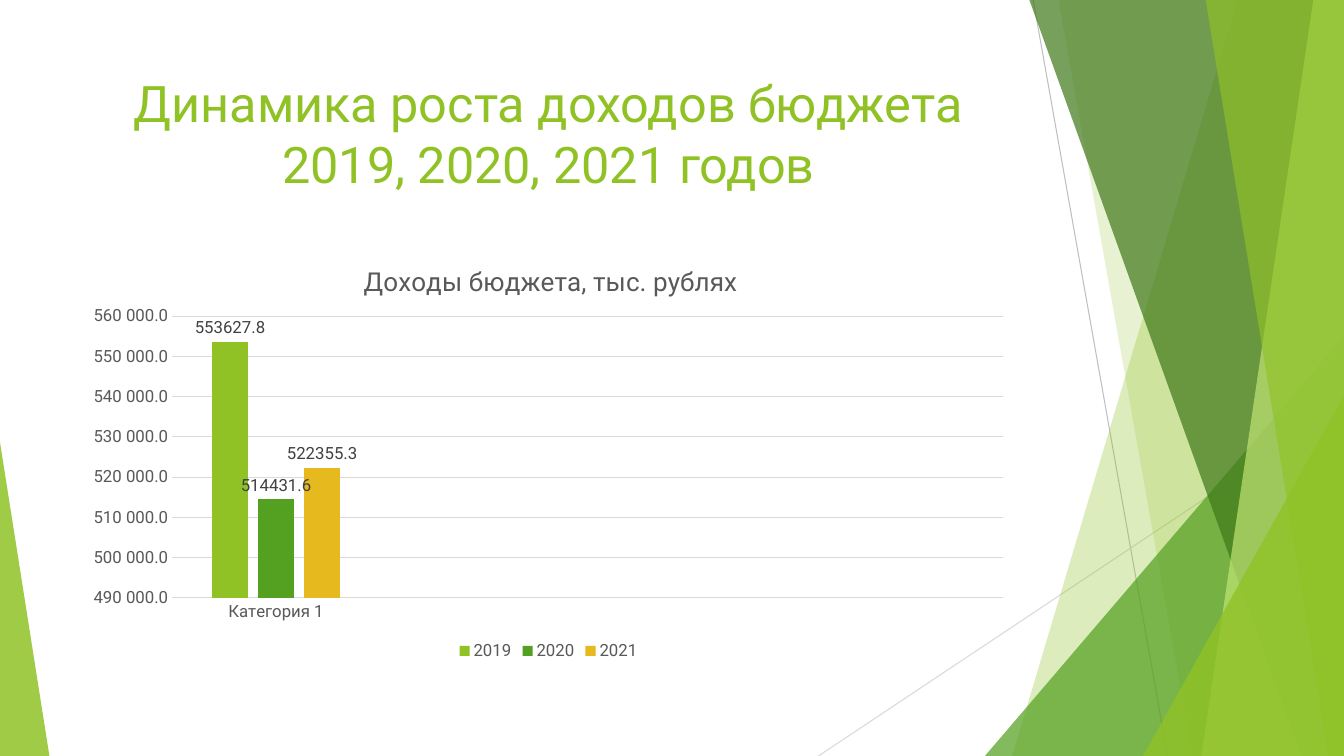
from lxml.etree import SubElement
from pptx import Presentation
from pptx.chart.data import CategoryChartData
from pptx.dml.color import RGBColor
from pptx.enum.chart import XL_CHART_TYPE, XL_LABEL_POSITION, XL_LEGEND_POSITION, XL_TICK_MARK
from pptx.enum.shapes import MSO_CONNECTOR, MSO_SHAPE
from pptx.enum.text import MSO_ANCHOR, PP_ALIGN
from pptx.oxml import parse_xml
from pptx.oxml.ns import nsdecls, qn
from pptx.util import Pt

FONT = "Roboto"
LIME = RGBColor(0x90, 0xC2, 0x26)
GREEN = RGBColor(0x54, 0xA0, 0x21)
FOREST = RGBColor(0x3F, 0x78, 0x19)
PALE_LIME = RGBColor(0xC0, 0xE4, 0x74)
GOLD = RGBColor(0xE6, 0xB9, 0x1E)
GRAY = RGBColor(0xBF, 0xBF, 0xBF)
LIGHT_GRAY = RGBColor(0xD9, 0xD9, 0xD9)
TEXT_GRAY = RGBColor(0x59, 0x59, 0x59)
LABEL_GRAY = RGBColor(0x40, 0x40, 0x40)

WIDTH, HEIGHT = 960, 540
TOP = -0.6
INCOME = [("2019", 553627.8, LIME), ("2020", 514431.6, GREEN), ("2021", 522355.3, GOLD)]
RIBBONS = [
    (884.2, 723, LIME, 30),
    (756, 851.8, LIME, 20),
    (735.1, 929.5, FOREST, 70),
    (938.2, 858.2, PALE_LIME, 70),
    (861.1, 949, LIME, 65),
]


def style_font(font, size, color):
    font.name = FONT
    font.size = Pt(size)
    font.bold = False
    font.color.rgb = color


def paint(shape, color, opacity):
    shape.shadow.inherit = False
    shape.line.fill.background()
    shape.fill.solid()
    shape.fill.fore_color.rgb = color
    color_node = shape._element.spPr.find(qn("a:solidFill"))[0]
    SubElement(color_node, qn("a:alpha")).set("val", str(opacity * 1000))


def add_thin_line(page, start, end, color):
    line = page.shapes.add_connector(
        MSO_CONNECTOR.STRAIGHT, *(Pt(value) for value in start + end))
    line.line.color.rgb = color
    line.line.width = Pt(0.75)
    SubElement(line._element.spPr, qn("a:effectLst"))


def add_ribbon(page, top_left, bottom_left, color, opacity):
    builder = page.shapes.build_freeform(Pt(top_left), Pt(TOP))
    corners = [(WIDTH, TOP), (WIDTH, HEIGHT), (bottom_left, HEIGHT)]
    builder.add_line_segments([(Pt(x), Pt(y)) for x, y in corners], close=True)
    paint(builder.convert_to_shape(), color, opacity)


def add_triangle(page, left, top, width, apex, color, opacity):
    triangle = page.shapes.add_shape(
        MSO_SHAPE.ISOSCELES_TRIANGLE, Pt(left), Pt(top), Pt(width), Pt(HEIGHT - top))
    triangle.adjustments[0] = apex
    paint(triangle, color, opacity)


def add_decoration(page):
    add_thin_line(page, (738, 0), (834, HEIGHT), GRAY)
    add_thin_line(page, (WIDTH, 290), (584.6, HEIGHT), LIGHT_GRAY)
    for ribbon in RIBBONS[:2]:
        add_ribbon(page, *ribbon)
    add_triangle(page, 703.5, 240, 256.5, 1, GREEN, 72)
    for ribbon in RIBBONS[2:]:
        add_ribbon(page, *ribbon)
    add_triangle(page, 816.5, 283, 143.5, 1, LIME, 80)
    add_triangle(page, 0, 316, 35.3, 0, LIME, 85)


def fill_title(page, text):
    title = page.shapes.title
    title.left, title.top, title.width, title.height = Pt(53.3), Pt(48), Pt(677), Pt(104)
    frame = title.text_frame
    frame.word_wrap = True
    frame.vertical_anchor = MSO_ANCHOR.TOP
    para = frame.paragraphs[0]
    para.alignment = PP_ALIGN.CENTER
    span = para.add_run()
    span.text = text
    style_font(span.font, 36, LIME)


def make_layout(target, **places):
    items = "".join(f'<c:{name} val="{value}"/>' for name, value in places.items())
    return parse_xml(
        f'<c:layout {nsdecls("c")}><c:manualLayout>{target}'
        f'<c:xMode val="edge"/><c:yMode val="edge"/>{items}</c:manualLayout></c:layout>')


def place_layout(parent, layout, index):
    for old in parent.findall(qn("c:layout")):
        parent.remove(old)
    parent.insert(index, layout)


def style_chart_title(chart, text):
    chart.has_title = True
    span = chart.chart_title.text_frame.paragraphs[0].add_run()
    span.text = text
    style_font(span.font, 18.6, TEXT_GRAY)
    place_layout(chart.chart_title._element, make_layout("", x=0.3, y=0.05), 1)


def style_axes(chart):
    for axis in (chart.category_axis, chart.value_axis):
        axis.major_tick_mark = XL_TICK_MARK.NONE
        axis.minor_tick_mark = XL_TICK_MARK.NONE
        style_font(axis.tick_labels.font, 12, TEXT_GRAY)
    base = chart.category_axis.format.line
    values = chart.value_axis
    values.format.line.fill.background()
    values.has_major_gridlines = True
    for line in (base, values.major_gridlines.format.line):
        line.color.rgb = LIGHT_GRAY
        line.width = Pt(0.75)
    values.minimum_scale, values.maximum_scale, values.major_unit = 490000, 560000, 10000
    values.tick_labels.number_format = "#\\ ##0.0"
    values.tick_labels.number_format_is_linked = False


def style_series(series, color):
    series.format.fill.solid()
    series.format.fill.fore_color.rgb = color
    series.invert_if_negative = False
    labels = series.data_labels
    labels.show_value = True
    labels.position = XL_LABEL_POSITION.OUTSIDE_END
    style_font(labels.font, 12, LABEL_GRAY)


def add_income_chart(page):
    data = CategoryChartData()
    data.categories = ["Категория 1", "", "", ""]
    for year, amount, _ in INCOME:
        data.add_series(year, [amount, None, None, None])
    chart = page.shapes.add_chart(
        XL_CHART_TYPE.COLUMN_CLUSTERED, Pt(53.3), Pt(170), Pt(677), Pt(305), data).chart
    style_font(chart.font, 12, TEXT_GRAY)
    style_chart_title(chart, "Доходы бюджета, тыс. рублях")
    style_axes(chart)
    chart.has_legend = True
    chart.legend.position = XL_LEGEND_POSITION.BOTTOM
    chart.legend.include_in_layout = False
    style_font(chart.legend.font, 12, TEXT_GRAY)
    plot = chart.plots[0]
    plot.vary_by_categories = False
    plot.gap_width, plot.overlap = 219, -27
    for series, (_, _, color) in zip(plot.series, INCOME):
        style_series(series, color)
    inner = make_layout('<c:layoutTarget val="inner"/>', x=0.103, y=0.183, w=0.877, h=0.66)
    place_layout(chart._chartSpace.chart.plotArea, inner, 0)


def main():
    deck = Presentation()
    deck.slide_width, deck.slide_height = Pt(WIDTH), Pt(HEIGHT)
    page = deck.slides.add_slide(deck.slide_layouts[5])
    add_decoration(page)
    fill_title(page, "Динамика роста доходов бюджета 2019, 2020, 2021 годов")
    add_income_chart(page)
    deck.save("out.pptx")


if __name__ == "__main__":
    main()
